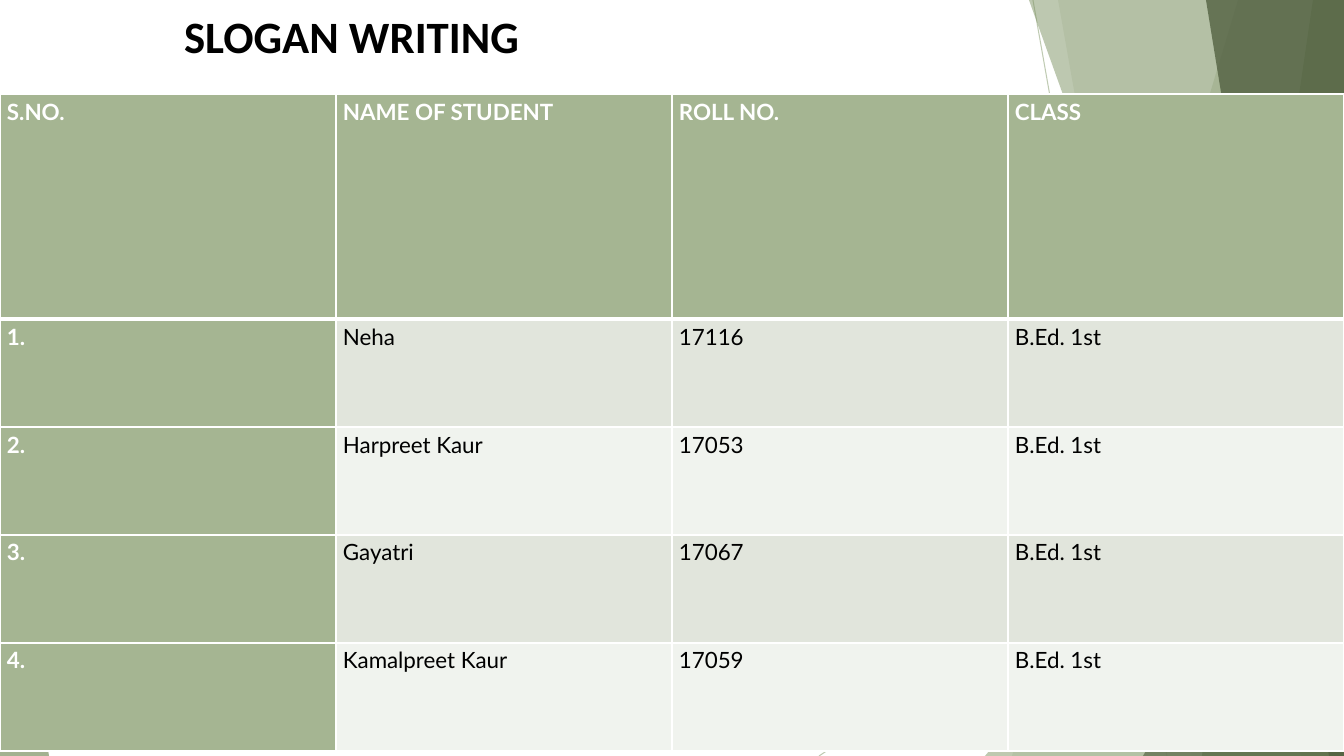
from lxml.etree import SubElement
from pptx import Presentation
from pptx.dml.color import RGBColor
from pptx.enum.shapes import MSO_CONNECTOR, MSO_SHAPE
from pptx.enum.text import MSO_ANCHOR, PP_ALIGN
from pptx.oxml.ns import qn
from pptx.util import Emu, Pt

TITLE = "SLOGAN WRITING"
ROWS = [
    ("S.NO.", "NAME OF STUDENT", "ROLL NO.", "CLASS"),
    ("1.", "Neha", "17116", "B.Ed. 1st"),
    ("2.", "Harpreet Kaur", "17053", "B.Ed. 1st"),
    ("3.", "Gayatri", "17067", "B.Ed. 1st"),
    ("4.", "Kamalpreet Kaur", "17059", "B.Ed. 1st"),
]
WIDE, HIGH = 1344, 756
SCALE = 914400 / 100.8
SAGE, MOSS, PINE = "A5B592", "7D9263", "536142"
BANDS = ["E1E5DC", "F0F3EE"]
TOP, HEAD, ROW = 94, 225, 108

RAYS = [(1033, 0, 1167, HIGH), (WIDE, 406, 819, HIGH)]
# Facets run to the right edge: ("slab", top x, bottom x, colour, opacity)
# or ("tri", left, top, width, apex, colour, opacity), down to the bottom edge.
FACETS = [
    ("slab", 1238, 1012, SAGE, 36),
    ("slab", 1058, 1192, SAGE, 20),
    ("tri", 985, 336, 359, 1, SAGE, 72),
    ("slab", 1029, 1301, MOSS, 50),
    ("slab", 1313, 1202, MOSS, 70),
    ("slab", 1206, 1329, PINE, 80),
    ("tri", 1143, 396, 201, 1, PINE, 66),
    ("tri", 0, 443, 49, 0, MOSS, 70),
]


def px(n):
    return Emu(round(n * SCALE))


def paint(fill, tone, alpha=100):
    """Fill with a solid colour at the given opacity in percent."""
    fill.solid()
    fill.fore_color.rgb = RGBColor.from_string(tone)
    if alpha < 100:
        clr = fill._xPr.find(qn("a:solidFill"))[0]
        SubElement(clr, qn("a:alpha"), val=str(alpha * 1000))


def write(par, text, font, size, tone, bold):
    run = par.add_run()
    run.text = text
    run.font.name, run.font.size, run.font.bold = font, Pt(size), bold
    run.font.color.rgb = RGBColor.from_string(tone)


def draw_ray(shapes, ends):
    ray = shapes.add_connector(MSO_CONNECTOR.STRAIGHT, *map(px, ends))
    ray.line.width = Pt(0.75)
    paint(ray.line.fill, SAGE, 70)
    SubElement(ray._element.spPr, qn("a:effectLst"))


def draw_facet(shapes, kind, *args):
    *place, tone, alpha = args
    if kind == "slab":
        top, low = place
        pen = shapes.build_freeform(top, 0, SCALE)
        pen.add_line_segments([(WIDE, 0), (WIDE, HIGH), (low, HIGH)])
        facet = pen.convert_to_shape()
    else:
        x, y, w, apex = place
        box = map(px, (x, y, w, HIGH - y))
        facet = shapes.add_shape(MSO_SHAPE.ISOSCELES_TRIANGLE, *box)
        facet.adjustments[0] = apex
    facet.shadow.inherit = False
    facet.line.fill.background()
    paint(facet.fill, tone, alpha)


def edge(cell, **sides):
    """Draw white borders; each side gives its width in points."""
    props = cell._tc.get_or_add_tcPr()
    for side, width in sides.items():
        line = SubElement(props, qn("a:ln" + side), w=str(Pt(width)))
        solid = SubElement(line, qn("a:solidFill"))
        SubElement(solid, qn("a:srgbClr"), val="FFFFFF")


def fill_cell(cell, text, r, c):
    head = r == 0 or c == 0
    edge(cell, L=1, R=1, T=3 if r == 1 else 1, B=3 if r == 0 else 1)
    paint(cell.fill, SAGE if head else BANDS[(r - 1) % 2])
    cell.margin_left = cell.margin_right = px(7)
    cell.margin_top = cell.margin_bottom = 0
    par = cell.text_frame.paragraphs[0]
    par.line_spacing = 1.15
    write(par, text, "Lato", 16, "FFFFFF" if head else "000000", head)


def add_grid(shapes):
    count, cols = len(ROWS), len(ROWS[0])
    high = HEAD + ROW * (count - 1)
    box = map(px, (0, TOP, WIDE, high))
    table = shapes.add_table(count, cols, *box).table
    for col in table.columns:
        col.width = px(WIDE / cols)
    for r, row in enumerate(ROWS):
        table.rows[r].height = px(ROW if r else HEAD)
        for c, text in enumerate(row):
            fill_cell(table.cell(r, c), text, r, c)


def set_title(title):
    title.left, title.top, title.width, title.height = map(px, (0, 3, WIDE, 65))
    frame = title.text_frame
    frame.word_wrap = True
    frame.vertical_anchor = MSO_ANCHOR.MIDDLE
    frame.margin_left, frame.margin_right = px(184), 0
    frame.margin_top = frame.margin_bottom = px(5)
    par = frame.paragraphs[0]
    par.alignment = PP_ALIGN.LEFT
    write(par, TITLE, "Calibri", 32, "000000", True)


def main():
    prs = Presentation()
    prs.slide_width, prs.slide_height = px(WIDE), px(HIGH)
    slide = prs.slides.add_slide(prs.slide_layouts[5])
    paint(slide.background.fill, "FFFFFF")
    set_title(slide.shapes.title)
    for ends in RAYS:
        draw_ray(slide.shapes, ends)
    for facet in FACETS:
        draw_facet(slide.shapes, *facet)
    add_grid(slide.shapes)
    prs.save("out.pptx")


if __name__ == "__main__":
    main()
